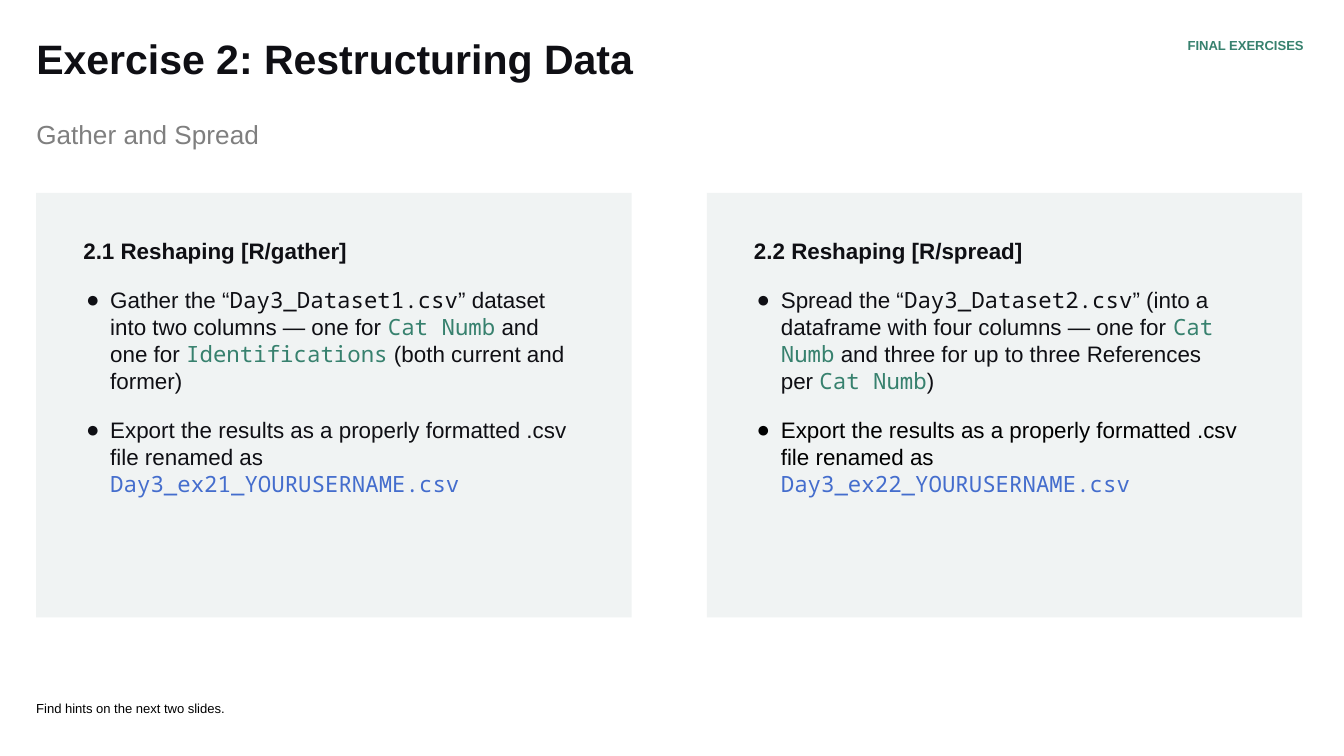
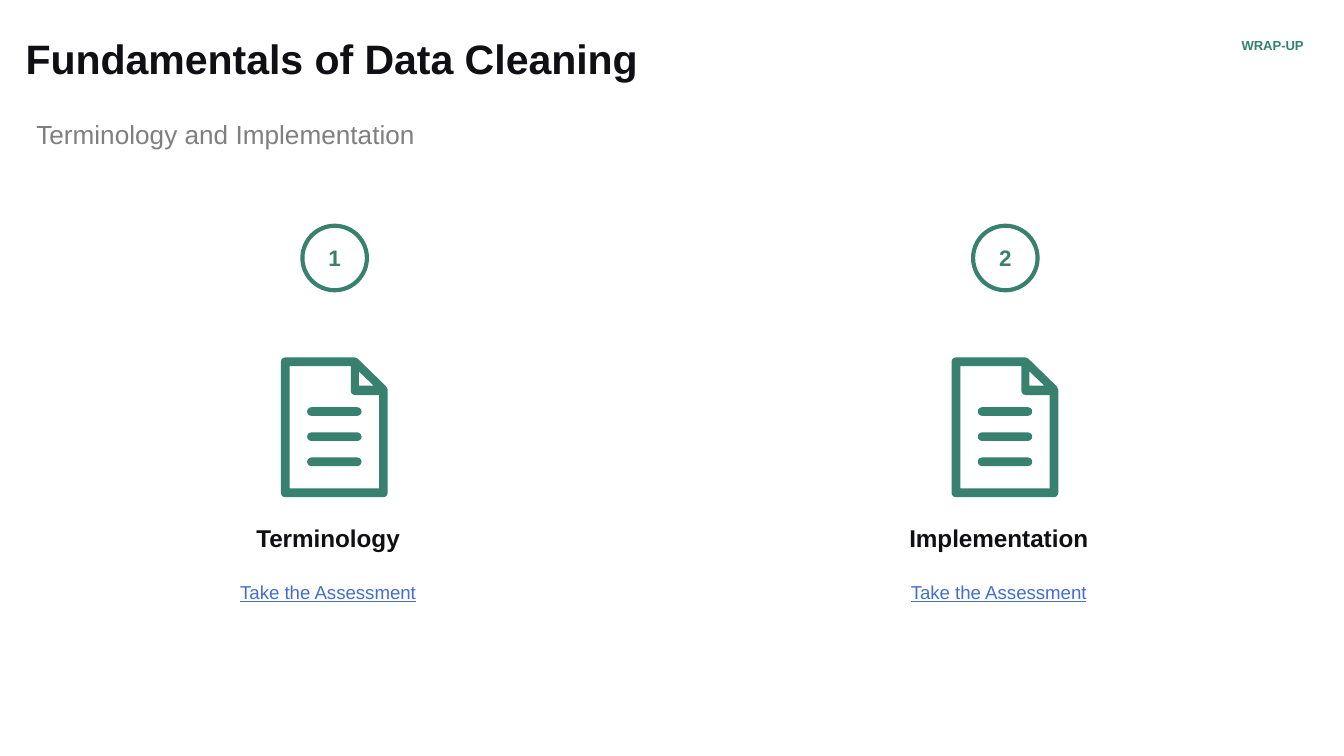
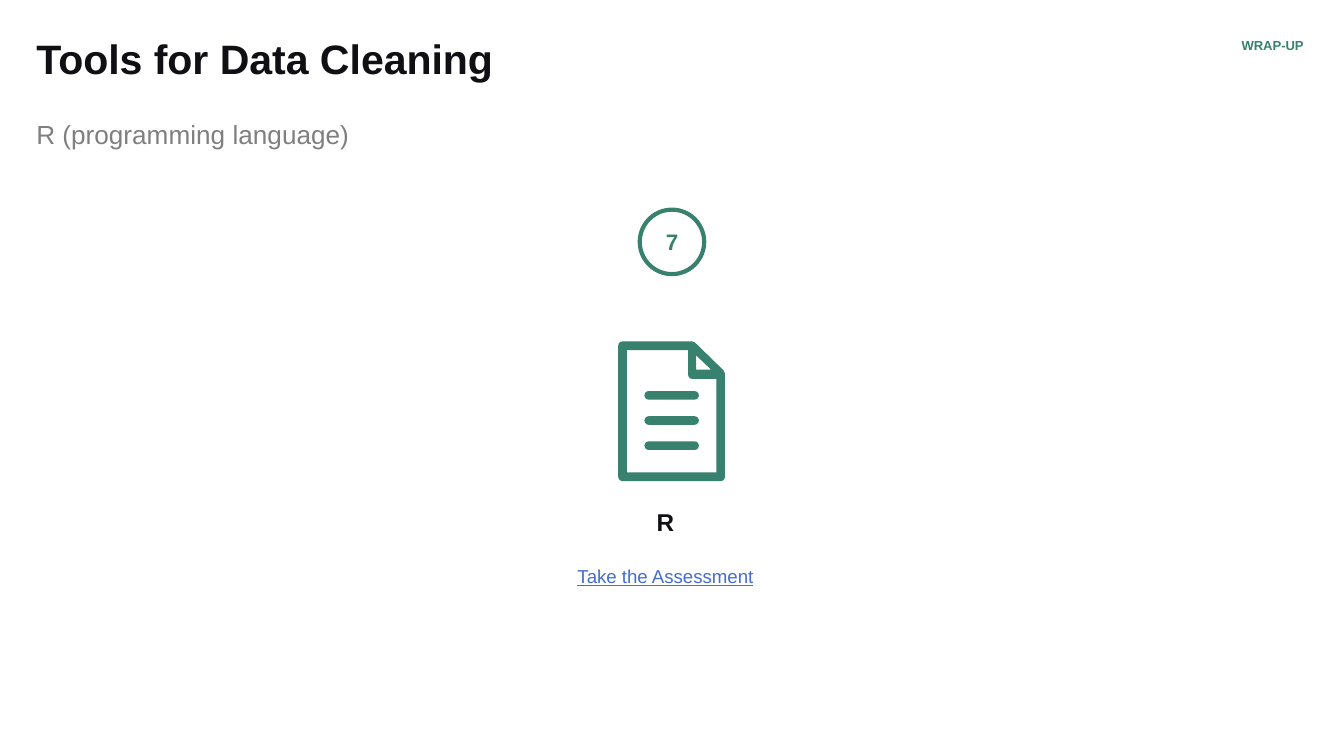
import math
import typing

import lxml.etree
import pptx
import pptx.dml.color
import pptx.enum.shapes
import pptx.enum.text
import pptx.oxml.ns
import pptx.util

RGBColor = pptx.dml.color.RGBColor
INK = RGBColor(0x0F, 0x0F, 0x14)
BLACK = RGBColor(0x00, 0x00, 0x00)
GREY = RGBColor(0x7F, 0x7F, 0x7F)
GREEN = RGBColor(0x37, 0x81, 0x6E)
BLUE = RGBColor(0x44, 0x6D, 0xCD)
PANEL = RGBColor(0xF0, 0xF3, 0xF3)

SLIDE_WIDTH = pptx.util.Inches(10)
SLIDE_HEIGHT = pptx.util.Inches(5.625)
CELL = SLIDE_WIDTH // 100
LEFT_COLUMN = 2.7
COLUMN_STEP = 49.9

ALIGN = pptx.enum.text.PP_ALIGN
ANCHOR = pptx.enum.text.MSO_ANCHOR
SHAPE = pptx.enum.shapes.MSO_SHAPE

SANS = {"name": "Arial", "bold": False}
MONO = {"name": "Noto Sans Mono", "bold": False, "size": pptx.util.Pt(12)}
TITLE = SANS | {"size": pptx.util.Pt(22), "color": INK, "bold": True}
SUBTITLE = SANS | {"size": pptx.util.Pt(14), "color": GREY}
SECTION = SANS | {"size": pptx.util.Pt(7), "color": GREEN, "bold": True}
HINT = SANS | {"size": pptx.util.Pt(7), "color": BLACK}
BODY = SANS | {"size": pptx.util.Pt(12), "color": INK}
BODY_BLACK = BODY | {"color": BLACK}
HEADING = BODY | {"bold": True}
FILE = MONO | {"color": INK}
FIELD = MONO | {"color": GREEN}
RESULT = MONO | {"color": BLUE}
NUMBER = HEADING | {"color": GREEN}
LABEL = HEADING | {"size": pptx.util.Pt(13)}
LINK = SANS | {"size": pptx.util.Pt(10), "color": BLUE, "underline": True}

FRAME = {
    "word_wrap": True,
    "auto_size": pptx.enum.text.MSO_AUTO_SIZE.NONE,
    "vertical_anchor": ANCHOR.TOP,
    "margin_left": 0,
    "margin_top": 0,
    "margin_right": CELL,
    "margin_bottom": CELL,
}
PADDED = FRAME | {"margin_top": CELL}
LEFT = {"alignment": ALIGN.LEFT, "space_before": pptx.util.Pt(0)}
CENTER = LEFT | {"alignment": ALIGN.CENTER}
CAPTION = CENTER | {"space_after": pptx.util.Pt(12)}
BULLETED = LEFT | {"space_before": pptx.util.Pt(12)}


class Box(typing.NamedTuple):
    """A region measured in grid cells."""

    left: float
    top: float
    width: float
    height: float

    def within(self, left, top, width, height):
        """Return a region placed relative to this one."""
        return Box(self.left + left, self.top + top, width, height)

    def emu(self):
        """Return the region in slide units."""
        return [round(length * CELL) for length in self]


def apply(target, values):
    """Set each format value on the target."""
    for name, value in values.items():
        if name == "color":
            target.color.rgb = value
        else:
            setattr(target, name, value)


def place(shape, box):
    """Move a shape onto a region."""
    for side, length in zip(("left", "top", "width", "height"), box.emu()):
        setattr(shape, side, length)


def add_runs(paragraph, layout, runs):
    """Format a paragraph and add its styled runs."""
    apply(paragraph, layout)
    for text, style in runs:
        run = paragraph.add_run()
        run.text = text
        apply(run.font, style)


def write(shape, text, style, layout=LEFT, frame=FRAME):
    """Write one styled paragraph into a shape."""
    apply(shape.text_frame, frame)
    add_runs(shape.text_frame.paragraphs[0], layout, [(text, style)])


def add_text(slide, box, *content):
    """Add a text box holding one paragraph."""
    write(slide.shapes.add_textbox(*box.emu()), *content)


def add_solid(shapes, kind, box, color):
    """Add a preset shape with a plain fill."""
    shape = shapes.add_shape(kind, *box.emu())
    paint(shape, color)
    return shape


def paint(shape, color):
    """Give a shape a flat fill without line or shadow."""
    shape.shadow.inherit = False
    shape.fill.solid()
    shape.fill.fore_color.rgb = color
    shape.line.fill.background()


def set_bullet(paragraph, color=None):
    """Give a paragraph a coloured bullet, or none."""
    qn = pptx.oxml.ns.qn
    properties = paragraph._p.get_or_add_pPr()
    hang = round(1.8 * CELL) if color else 0
    properties.set("marL", str(2 * CELL if color else 0))
    properties.set("indent", str(-hang))
    if color is None:
        lxml.etree.SubElement(properties, qn("a:buNone"))
        return
    fill = lxml.etree.SubElement(properties, qn("a:buClr"))
    lxml.etree.SubElement(fill, qn("a:srgbClr"), val=str(color))
    lxml.etree.SubElement(properties, qn("a:buFont"), typeface="Arial")
    lxml.etree.SubElement(properties, qn("a:buChar"), char="●")


def add_header(slide, title, subtitle, section, title_left=LEFT_COLUMN):
    """Fill the title, the subtitle and the section mark."""
    tight = LEFT | {"line_spacing": 0.9}
    place(slide.shapes.title, Box(title_left, 2.9, 79.9, 5.9))
    write(slide.shapes.title, title, TITLE, tight)
    add_text(slide, Box(LEFT_COLUMN, 8.8, 70.9, 4.7), subtitle, SUBTITLE)
    add_text(slide, Box(75.7, 2.9, 21.3, 1.6), section, SECTION,
             tight | {"alignment": ALIGN.RIGHT}, FRAME | {"margin_right": 0})


def add_exercise(slide, box, body, heading, tasks):
    """Lay an exercise's heading and tasks over a tinted panel."""
    panel = add_solid(slide.shapes, SHAPE.RECTANGLE, box, PANEL)
    panel.element.addnext(body.element)
    place(body, box.within(3.5, 2.3, 37.2, 25.6))
    write(body, heading, HEADING, frame=PADDED)
    set_bullet(body.text_frame.paragraphs[0])
    for runs in tasks:
        task = body.text_frame.add_paragraph()
        set_bullet(task, runs[0][1]["color"])
        add_runs(task, BULLETED, runs)


def quarter(x, y, start, radius=32):
    """Return points of a quarter turn around a centre."""
    angles = [math.radians(start - 30 * step) for step in range(4)]
    return [(x + radius * math.cos(a), y + radius * math.sin(a)) for a in angles]


def add_document_icon(slide, box):
    """Draw a page with a folded corner and three text lines."""
    icon = slide.shapes.add_group_shape().shapes
    rim = [(794, 240), (783, 216), (571, 9), (550, 0),
           *quarter(32, 32, 270), *quarter(32, 1008, 180), *quarter(762, 1008, 90)]
    fold = [(580, 105), (690, 210), (580, 210)]
    sheet = [(65, 975), (65, 65), (520, 65), *quarter(552, 248, 180),
             (730, 280), (730, 975)]
    page = icon.build_freeform(*rim[0], scale=CELL / 100)
    page.add_line_segments(rim[1:])
    for hole in (fold, sheet):
        page.move_to(*hole[0])
        page.add_line_segments(hole[1:])
    paint(page.convert_to_shape(*box.emu()[:2]), GREEN)
    for row in range(3):
        bar = add_solid(icon, SHAPE.ROUNDED_RECTANGLE,
                        box.within(1.95, 3.7 + 1.87 * row, 4.05, 0.64), GREEN)
        bar.adjustments[0] = 0.5


def add_assessment(slide, left, top, number, topic):
    """Stack a number badge, an icon, a topic and its link text."""
    box = Box(left, top, 21.6, 29.1)
    badge = slide.shapes.add_shape(SHAPE.OVAL, *box.within(8.4, 0, 4.8, 4.8).emu())
    badge.shadow.inherit = False
    badge.fill.background()
    apply(badge.line, {"color": GREEN, "width": pptx.util.Pt(2.25)})
    middle = {"vertical_anchor": ANCHOR.MIDDLE}
    write(badge, number, NUMBER, CENTER,
          FRAME | middle | {"margin_right": 0, "margin_bottom": 0})
    add_document_icon(slide, box.within(6.8, 9.8, 7.9, 10.4))
    add_text(slide, box.within(0, 21, box.width, 4.4), topic, LABEL, CAPTION,
             PADDED | middle)
    add_text(slide, box.within(0, 25.4, box.width, 3.7), "Take the Assessment",
             LINK, CAPTION, PADDED)


def build_exercise_slide(deck):
    """Build the slide with the two reshaping exercises."""
    slide = deck.slides.add_slide(deck.slide_layouts[3])
    add_header(slide, "Exercise 2: Restructuring Data", "Gather and Spread",
               "FINAL EXERCISES")
    export = "Export the results as a properly formatted .csv file renamed as "
    exercises = [
        ("2.1 Reshaping [R/gather]", [
            [("Gather the “", BODY), ("Day3_Dataset1.csv", FILE),
             ("” dataset into two columns — one for ", BODY),
             ("Cat Numb", FIELD), (" and one for ", BODY),
             ("Identifications", FIELD), (" (both current and former)", BODY)],
            [(export, BODY), ("Day3_ex21_YOURUSERNAME.csv", RESULT)],
        ]),
        ("2.2 Reshaping [R/spread]", [
            [("Spread the “", BODY), ("Day3_Dataset2.csv", FILE),
             ("” (into a dataframe with four columns — one for ", BODY),
             ("Cat Numb", FIELD),
             (" and three for up to three References per ", BODY),
             ("Cat Numb", FIELD), (")", BODY)],
            [(export, BODY_BLACK), ("Day3_ex22_YOURUSERNAME.csv", RESULT)],
        ]),
    ]
    for column, (heading, tasks) in enumerate(exercises):
        box = Box(LEFT_COLUMN + COLUMN_STEP * column, 14.35, 44.3, 31.6)
        add_exercise(slide, box, slide.placeholders[column + 1], heading, tasks)
    add_text(slide, Box(LEFT_COLUMN, 49, 84, 4.3),
             "Find hints on the next two slides.", HINT, LEFT,
             FRAME | {"vertical_anchor": ANCHOR.BOTTOM, "margin_bottom": 0})


def build_wrap_up_slide(deck, title, subtitle, assessments, left, top,
                        title_left=LEFT_COLUMN):
    """Build a wrap-up slide with its assessments side by side."""
    slide = deck.slides.add_slide(deck.slide_layouts[5])
    add_header(slide, title, subtitle, "WRAP-UP", title_left)
    for column, (number, topic) in enumerate(assessments):
        add_assessment(slide, left + COLUMN_STEP * column, top, number, topic)


def main():
    """Build and save the deck."""
    deck = pptx.Presentation()
    apply(deck, {"slide_width": SLIDE_WIDTH, "slide_height": SLIDE_HEIGHT})
    build_exercise_slide(deck)
    build_wrap_up_slide(deck, "Fundamentals of Data Cleaning",
                        "Terminology and Implementation",
                        [("1", "Terminology"), ("2", "Implementation")],
                        14.1, 16.8, title_left=1.9)
    build_wrap_up_slide(deck, "Tools for Data Cleaning",
                        "R (programming language)", [("7", "R")], 39.2, 15.6)
    deck.save("out.pptx")


if __name__ == "__main__":
    main()
